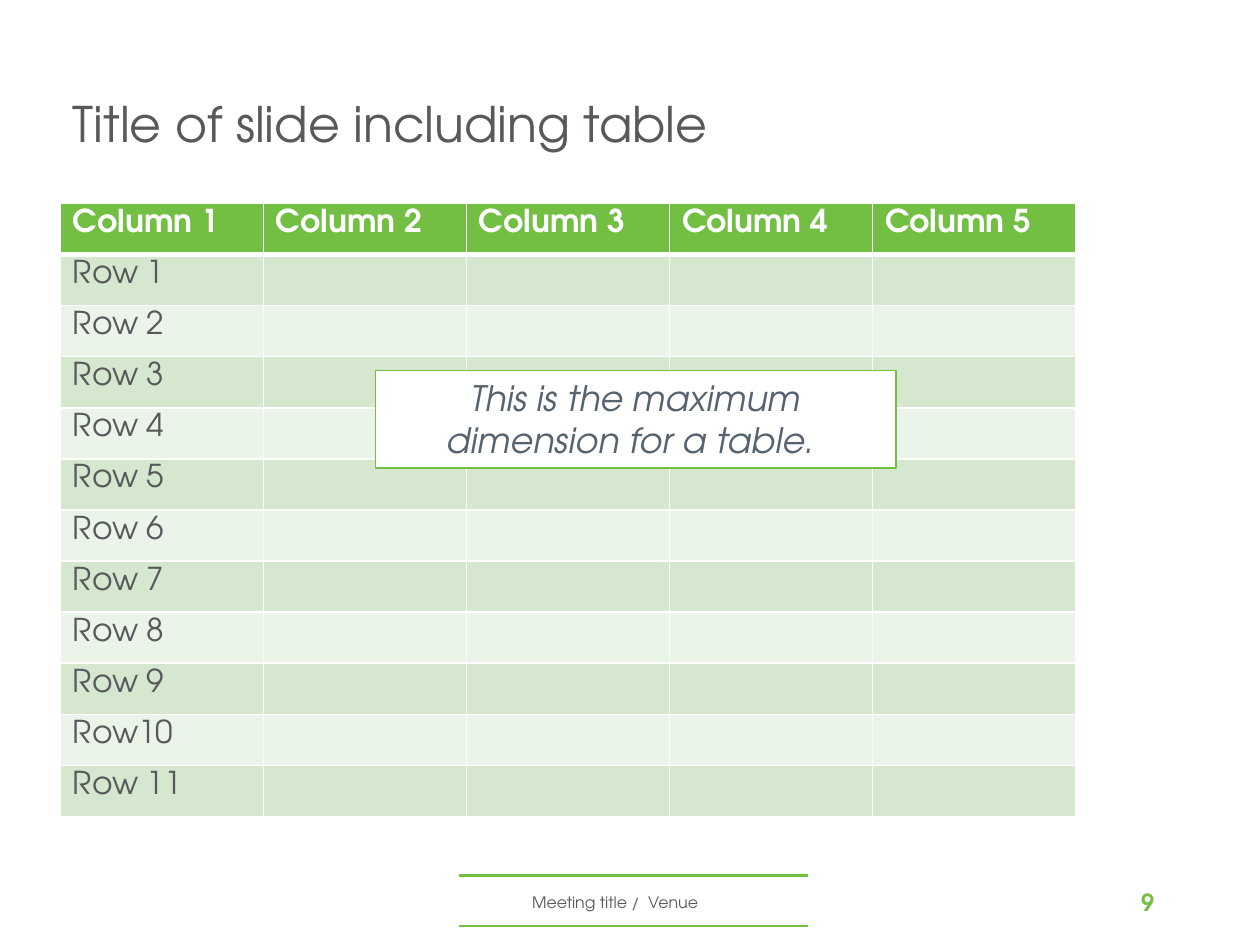
from lxml import etree
from pptx import Presentation
from pptx import util as u
from pptx.dml.color import RGBColor
from pptx.enum import shapes, text
from pptx.oxml import ns

HUE = {"green": "72BF44", "grey": "58595B", "slate": "556370",
       "white": "FFFFFF", "dark": "D5E8CF", "light": "EBF4E9"}
FACE = "TeX Gyre Adventor"
ALIGN = text.PP_ALIGN
MID = text.MSO_ANCHOR.MIDDLE


def tint(name):
    return RGBColor.from_string(HUE[name])


def paint(fill, name):
    fill.solid()
    fill.fore_color.rgb = tint(name)


def write(frame, words, hue, align=ALIGN.LEFT, lead=None, **form):
    para = frame.paragraphs[0]
    para.alignment = align
    if lead:
        para.line_spacing = lead
    run = para.add_run()
    run.text = words
    for key, val in {"name": FACE, **form}.items():
        setattr(run.font, key, val)
    run.font.color.rgb = tint(hue)


def label(slide, box, words, hue, **form):
    frame = slide.shapes.add_textbox(*map(u.Cm, box)).text_frame
    frame.word_wrap = True
    frame.vertical_anchor = MID
    write(frame, words, hue, **form)


def rule(slide, left, top, width):
    line = slide.shapes.add_connector(
        shapes.MSO_CONNECTOR.STRAIGHT,
        *map(u.Cm, (left, top, left + width, top)))
    line.line.color.rgb = tint("green")
    line.line.width = u.Pt(1.5)
    etree.SubElement(line._element.spPr, ns.qn("a:effectLst"))


def edge(cell, widths):
    props = cell._tc.get_or_add_tcPr()
    for spot, (side, width) in enumerate(widths.items()):
        line = etree.Element(ns.qn("a:ln" + side), w=str(u.Pt(width)))
        fill = etree.SubElement(line, ns.qn("a:solidFill"))
        etree.SubElement(fill, ns.qn("a:srgbClr"), val=HUE["white"])
        props.insert(spot, line)


def grid(slide, box, heads, names):
    left, top, width, height = box
    rows, cols = len(names) + 1, len(heads)
    table = slide.shapes.add_table(rows, cols, *map(u.Cm, box)).table
    for col in table.columns:
        col.width = u.Cm(width / cols)
    for row in table.rows:
        row.height = u.Cm(height / rows)
    for r in range(rows):
        for c in range(cols):
            cell = table.cell(r, c)
            form = {"margin_left": u.Cm(0.25), "margin_right": u.Cm(0.25),
                    "margin_top": u.Cm(0.16), "margin_bottom": 0}
            for key, val in form.items():
                setattr(cell, key, val)
            paint(cell.fill, "green" if r == 0 else ("light", "dark")[r % 2])
            edge(cell, {"L": 1, "R": 1, "T": 3 if r == 1 else 1,
                        "B": 3 if r == 0 else 1})
            words = heads[c] if r == 0 else names[r - 1] if c == 0 else ""
            if words:
                write(cell.text_frame, words, "grey" if r else "white",
                      lead=0.9, size=u.Pt(18), bold=r == 0)
            else:
                cell.text_frame.paragraphs[0].font.size = u.Pt(18)


def note(slide, box, words):
    shape = slide.shapes.add_shape(
        shapes.MSO_SHAPE.RECTANGLE, *map(u.Cm, box))
    shape.shadow.inherit = False
    paint(shape.fill, "white")
    shape.line.color.rgb = tint("green")
    shape.line.width = u.Pt(1)
    frame = shape.text_frame
    frame.word_wrap = True
    frame.vertical_anchor = text.MSO_ANCHOR.TOP
    write(frame, words, "slate", align=ALIGN.CENTER,
          size=u.Pt(20), italic=True)


def foot(slide, box, words, page):
    left, top, width, height = box
    for drop in (0, height):
        rule(slide, left, top + drop, width)
    label(slide, (left - 1.14, top + 0.02, 8.58, height), words, "grey",
          align=ALIGN.CENTER, size=u.Pt(9))
    label(slide, (left + 13.05, top - 0.15, 1.22, 1.35), page, "green",
          align=ALIGN.RIGHT, size=u.Pt(13.5), bold=True)


def main():
    deck = Presentation()
    deck.slide_width, deck.slide_height = u.Cm(25.4), u.Cm(19.05)
    slide = deck.slides.add_slide(deck.slide_layouts[6])
    foot(slide, (9.25, 17.65, 7.04, 1.02), "Meeting title /  Venue", "9")
    heads = [f"Column {n}" for n in range(1, 6)]
    names = [f"Row {n}" for n in range(1, 10)] + ["Row10", "Row 11"]
    grid(slide, (1.22, 4.1, 20.47, 12.37), heads, names)
    label(slide, (1.22, 1.55, 20.47, 2), "Title of slide including table",
          "grey", lead=0.9, size=u.Pt(28))
    note(slide, (7.57, 7.47, 10.49, 1.96),
         "This is the maximum dimension for a table. ")
    deck.save("out.pptx")


if __name__ == "__main__":
    main()
